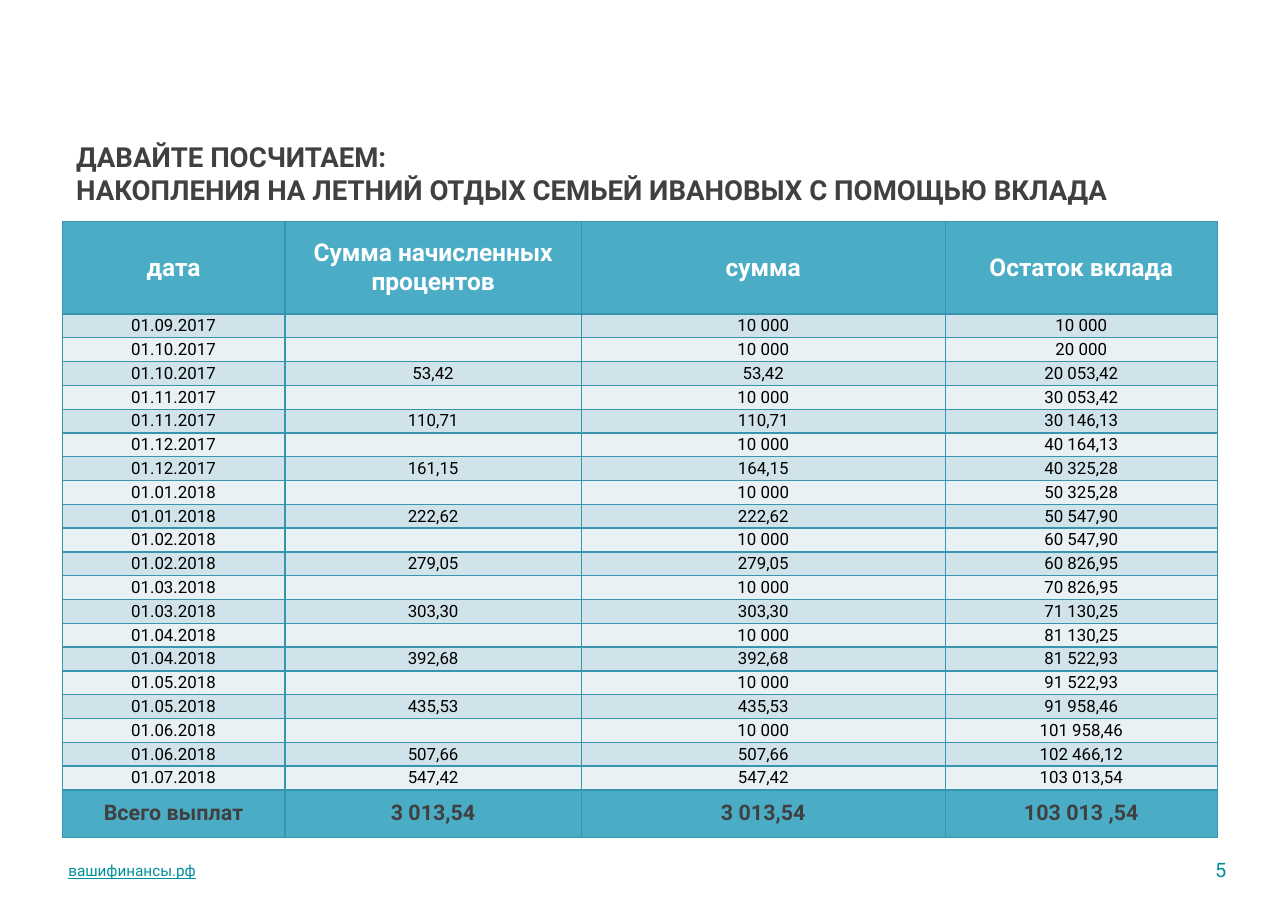
"""Build the slide with the savings table of the Ivanov family."""
from lxml import etree
from pptx import Presentation
from pptx import util as u
from pptx.dml.color import RGBColor
from pptx.enum import text
from pptx.oxml import ns

THEME = {
    "font": "Roboto",
    "dark": "404040", "black": "000000", "white": "FFFFFF", "link": "00909B",
    "accent": "4BACC6", "border": "3795AF", "bands": ("D0E3EA", "E9F1F5"),
    "title": 18, "header": 16, "total": 14, "number": 13, "body": 11, "footer": 10,
}

presentation = Presentation()
presentation.slide_width, presentation.slide_height = u.Inches(11.68), u.Inches(8.26)
slide = presentation.slides.add_slide(presentation.slide_layouts[6])
across, down = presentation.slide_width / 100, presentation.slide_height / 100


def style(paragraph, size, color, bold=False, align=text.PP_ALIGN.LEFT):
    """Set the alignment and font of a paragraph."""
    paragraph.alignment = align
    font = paragraph.font
    font.name, font.size, font.bold = THEME["font"], u.Pt(THEME[size]), bold
    font.color.rgb = RGBColor.from_string(THEME[color])


def add_text(words, left, top, width, height, anchor, wrap=True):
    """Add a text box placed in percent of the slide and return its paragraph."""
    box = slide.shapes.add_textbox(
        round(left * across), round(top * down), round(width * across), round(height * down))
    frame = box.text_frame
    frame.word_wrap, frame.vertical_anchor = wrap, anchor
    frame.margin_left = frame.margin_right = u.Inches(0.05)
    frame.margin_top = frame.margin_bottom = u.Inches(0.05)
    frame.text = words
    return frame.paragraphs[0]


footer = add_text("вашифинансы.рф", 4.88, 93.83, 33.99, 3.39, text.MSO_ANCHOR.MIDDLE)
style(footer, "footer", "link")
footer.font.underline = True

title = add_text(
    "ДАВАЙТЕ ПОСЧИТАЕМ:\vНАКОПЛЕНИЯ НА ЛЕТНИЙ ОТДЫХ СЕМЬЕЙ ИВАНОВЫХ С ПОМОЩЬЮ ВКЛАДА",
    5.48, 14.77, 89.55, 11.62, text.MSO_ANCHOR.TOP)
style(title, "title", "dark", bold=True)

rows = [
    ("дата", "Сумма начисленных процентов", "сумма", "Остаток вклада"),
    ("01.09.2017", "", "10 000", "10 000"),
    ("01.10.2017", "", "10 000", "20 000"),
    ("01.10.2017", "53,42", "53,42", "20 053,42"),
    ("01.11.2017", "", "10 000", "30 053,42"),
    ("01.11.2017", "110,71", "110,71", "30 146,13"),
    ("01.12.2017", "", "10 000", "40 164,13"),
    ("01.12.2017", "161,15", "164,15", "40 325,28"),
    ("01.01.2018", "", "10 000", "50 325,28"),
    ("01.01.2018", "222,62", "222,62", "50 547,90"),
    ("01.02.2018", "", "10 000", "60 547,90"),
    ("01.02.2018", "279,05", "279,05", "60 826,95"),
    ("01.03.2018", "", "10 000", "70 826,95"),
    ("01.03.2018", "303,30", "303,30", "71 130,25"),
    ("01.04.2018", "", "10 000", "81 130,25"),
    ("01.04.2018", "392,68", "392,68", "81 522,93"),
    ("01.05.2018", "", "10 000", "91 522,93"),
    ("01.05.2018", "435,53", "435,53", "91 958,46"),
    ("01.06.2018", "", "10 000", "101 958,46"),
    ("01.06.2018", "507,66", "507,66", "102 466,12"),
    ("01.07.2018", "547,42", "547,42", "103 013,54"),
    ("Всего выплат", "3 013,54", "3 013,54", "103 013 ,54"),
]
column_weights = (2.02, 2.69, 3.3, 2.47)
last = len(rows) - 1
table_width, table_height = 89.7 * across, 67.68 * down
header_height, total_height = 10.17 * down, 5.21 * down
body_height = (table_height - header_height - total_height) / (last - 1)

table = slide.shapes.add_table(
    len(rows), len(column_weights), round(4.83 * across), round(24.3 * down),
    round(table_width), round(table_height)).table
table.first_row = table.horz_banding = False
for column, weight in zip(table.columns, column_weights):
    column.width = round(table_width * weight / sum(column_weights))

for index, values in enumerate(rows):
    if index == 0:
        height, fill, look = header_height, THEME["accent"], ("header", "white", True)
    elif index == last:
        height, fill, look = total_height, THEME["accent"], ("total", "dark", True)
    else:
        height, fill = body_height, THEME["bands"][(index - 1) % 2]
        look = ("body", "black", False)
    table.rows[index].height = round(height)
    for cell, value in zip(table.rows[index].cells, values):
        cell.text = value
        cell.vertical_anchor = text.MSO_ANCHOR.MIDDLE
        cell.margin_left = cell.margin_right = u.Inches(0.07)
        cell.margin_top = cell.margin_bottom = 0
        style(cell.text_frame.paragraphs[0], *look, align=text.PP_ALIGN.CENTER)
        properties = cell._tc.get_or_add_tcPr()
        for side in ("a:lnL", "a:lnR", "a:lnT", "a:lnB"):
            line = etree.SubElement(properties, ns.qn(side), w=str(u.Pt(1)))
            solid = etree.SubElement(line, ns.qn("a:solidFill"))
            etree.SubElement(solid, ns.qn("a:srgbClr"), val=THEME["border"])
        cell.fill.solid()
        cell.fill.fore_color.rgb = RGBColor.from_string(fill)

number = add_text("5", 92.9, 93.46, 2.74, 4, text.MSO_ANCHOR.MIDDLE, wrap=False)
style(number, "number", "link", align=text.PP_ALIGN.RIGHT)

presentation.save("out.pptx")
